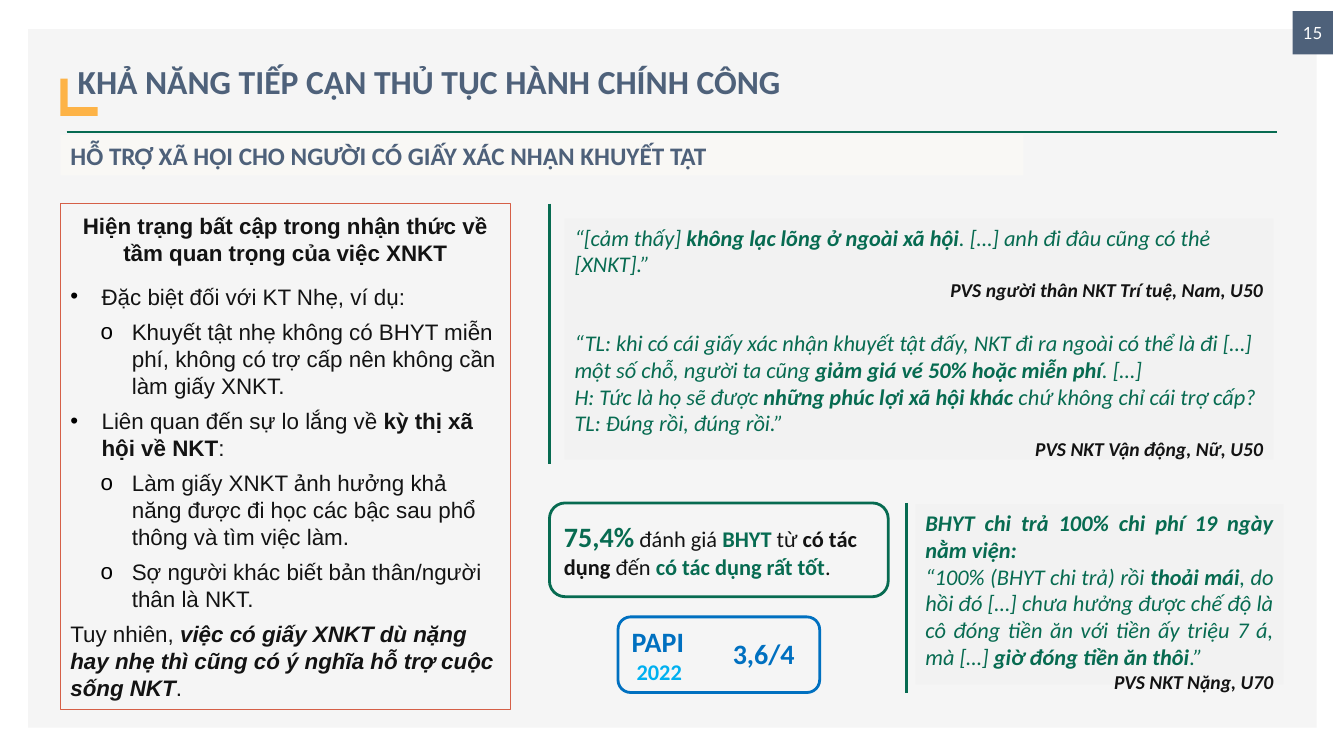
from dataclasses import dataclass

from lxml import etree
from pptx import Presentation
from pptx.dml.color import RGBColor
from pptx.enum.shapes import MSO_CONNECTOR, MSO_SHAPE
from pptx.enum.text import MSO_ANCHOR, MSO_AUTO_SIZE, PP_ALIGN
from pptx.oxml.ns import qn
from pptx.util import Pt

RECT, ROUND = MSO_SHAPE.RECTANGLE, MSO_SHAPE.ROUNDED_RECTANGLE
STRAIGHT = MSO_CONNECTOR.STRAIGHT
TOP, MIDDLE = MSO_ANCHOR.TOP, MSO_ANCHOR.MIDDLE
LEFT, CENTER, RIGHT, JUSTIFY = PP_ALIGN.LEFT, PP_ALIGN.CENTER, PP_ALIGN.RIGHT, PP_ALIGN.JUSTIFY
PX = 9144
INDENT = 31


@dataclass(frozen=True)
class Theme:
    panel: str = "F5F5F5"
    quote: str = "F2F2F2"
    cream: str = "F9F8F5"
    slate: str = "4E617A"
    amber: str = "FDB347"
    green: str = "076B51"
    red: str = "D55F47"
    ink: str = "131313"
    blue: str = "0070C0"
    sky: str = "00B0F0"
    white: str = "FFFFFF"
    black: str = "000000"
    title: int = 24
    big: int = 20
    subtitle: int = 18
    body: int = 16
    source: int = 14
    number: int = 12


T = Theme()


def run(text, style="", color=T.ink, size=T.body):
    return text, style, color, size


def para(*runs, **fmt):
    return runs, fmt


def speech(*parts, **fmt):
    return para(*(run(text, style, T.green) for text, style in parts), **fmt)


def source(text):
    return para(run(text, "bi", T.ink, T.source), align=RIGHT)


def bullet(level, *runs):
    return para(*runs, level=level, after=6)


TITLE = [para(run("KHẢ NĂNG TIẾP CẬN THỦ TỤC HÀNH CHÍNH CÔNG", "b", T.slate, T.title), spacing=1.5)]
SUBTITLE = [para(run("HỖ TRỢ XÃ HỘI CHO NGƯỜI CÓ GIẤY XÁC NHẬN KHUYẾT TẬT", "b", T.slate, T.subtitle))]
NUMBER = [para(run("15", "", T.white, T.number), align=CENTER)]
AWARENESS = [
    para(run("Hiện trạng bất cập trong nhận thức về tầm quan trọng của việc XNKT", "b"),
         align=CENTER, after=12),
    bullet(1, run("Đặc biệt đối với KT Nhẹ, ví dụ:")),
    bullet(2, run("Khuyết tật nhẹ không có BHYT miễn phí, không có trợ cấp nên không cần làm giấy XNKT.")),
    bullet(1, run("Liên quan đến sự lo lắng về "), run("kỳ thị xã hội về NKT", "b"), run(":")),
    bullet(2, run("Làm giấy XNKT ảnh hưởng khả năng được đi học các bậc sau phổ thông và tìm việc làm.")),
    bullet(2, run("Sợ người khác biết bản thân/người thân là NKT.")),
    para(run("Tuy nhiên, "),
         run("việc có giấy XNKT dù nặng hay nhẹ thì cũng có ý nghĩa hỗ trợ cuộc sống NKT", "bi"),
         run("."), after=6),
]
BENEFITS = [
    speech(("“[cảm thấy] ", "i"), ("không lạc lõng ở ngoài xã hội", "bi"),
           (". […] anh đi đâu cũng có thẻ [XNKT].”", "i")),
    source("PVS người thân NKT Trí tuệ, Nam, U50"),
    speech(("“TL: khi có cái giấy xác nhận khuyết tật đấy, NKT đi ra ngoài có thể là đi […] "
            "một số chỗ, người ta cũng ", "i"),
           ("giảm giá vé 50% hoặc miễn phí", "bi"), (". […]", "i"), before=20),
    speech(("H: Tức là họ sẽ được ", "i"), ("những phúc lợi xã hội khác ", "bi"),
           ("chứ không chỉ cái trợ cấp?", "i")),
    speech(("TL: Đúng rồi, đúng rồi.”", "i")),
    source("PVS NKT Vận động, Nữ, U50"),
]
RATING = [para(
    run("75,4%", "b", T.green, T.big), run(" đánh giá "), run("BHYT ", "b", T.green), run("từ "),
    run("có tác dụng ", "b"), run("đến"), run(" có tác dụng rất tốt", "b", T.green), run("."), after=6)]
HOSPITAL = [
    speech(("BHYT chi trả 100% chi phí 19 ngày nằm viện:", "bi"), align=JUSTIFY),
    speech(("“100% (BHYT chi trả) rồi ", "i"), ("thoải mái", "bi"),
           (", do hồi đó […] chưa hưởng được chế độ là cô đóng tiền ăn với tiền ấy triệu 7 á, mà […] ", "i"),
           ("giờ đóng tiền ăn thôi", "bi"), (".”", "i"), align=JUSTIFY),
    source("PVS NKT Nặng, U70"),
]
PAPI = [para(run("PAPI", "b", T.blue, T.big)), para(run("2022", "b", T.sky), margin=5)]
SCORE = [para(run("3,6/4", "b", T.blue, T.big), align=CENTER)]


def rgb(color):
    return RGBColor.from_string(color)


def add_bullet(p, level):
    pPr = p._p.get_or_add_pPr()
    pPr.set("marL", str((INDENT + 30 * (level - 1)) * PX))
    pPr.set("indent", str(-INDENT * PX))
    color = etree.SubElement(pPr, qn("a:buClr"))
    etree.SubElement(color, qn("a:srgbClr")).set("val", T.black)
    etree.SubElement(pPr, qn("a:buFont")).set("typeface", "Arial")
    etree.SubElement(pPr, qn("a:buChar")).set("char", "•" if level == 1 else "o")


def write(sp, paras, font="Calibri", anchor=TOP):
    tf = sp.text_frame
    tf.word_wrap = True
    tf.auto_size = MSO_AUTO_SIZE.NONE
    tf.vertical_anchor = anchor
    for i, (runs, fmt) in enumerate(paras):
        p = tf.paragraphs[0] if i == 0 else tf.add_paragraph()
        p.alignment = fmt.get("align", LEFT)
        p.line_spacing = fmt.get("spacing", 1.0)
        p.space_before = Pt(fmt.get("before", 0))
        p.space_after = Pt(fmt.get("after", 0))
        if "level" in fmt:
            add_bullet(p, fmt["level"])
        if "margin" in fmt:
            p._p.get_or_add_pPr().set("marL", str(fmt["margin"] * PX))
        for text, style, color, size in runs:
            r = p.add_run()
            r.text = text
            r.font.name = font
            r.font.size = Pt(size)
            r.font.bold = "b" in style
            r.font.italic = "i" in style
            r.font.color.rgb = rgb(color)


def add_box(s, box, fill=None, line=None, width=2, kind=RECT):
    sp = s.shapes.add_shape(kind, *(v * PX for v in box))
    sp.shadow.inherit = False
    if fill:
        sp.fill.solid()
        sp.fill.fore_color.rgb = rgb(fill)
    else:
        sp.fill.background()
    if line:
        sp.line.color.rgb = rgb(line)
        sp.line.width = Pt(width)
    else:
        sp.line.fill.background()
    return sp


def add_rule(s, x1, y1, x2, y2, width=2.25):
    cx = s.shapes.add_connector(STRAIGHT, *(v * PX for v in (x1, y1, x2, y2)))
    cx.line.color.rgb = rgb(T.green)
    cx.line.width = Pt(width)
    etree.SubElement(cx._element.spPr, qn("a:effectLst"))


def add_title(s, box):
    title = s.shapes.title
    s.shapes.element.append(title.element)
    title.left, title.top, title.width, title.height = (v * PX for v in box)
    title.fill.solid()
    title.fill.fore_color.rgb = rgb(T.panel)
    write(title, TITLE, anchor=MIDDLE)


def main():
    prs = Presentation()
    prs.slide_width, prs.slide_height = 1333 * PX, 750 * PX
    s = prs.slides.add_slide(prs.slide_layouts[5])

    add_box(s, (28, 29, 1278, 693), T.panel)
    add_rule(s, 66, 131, 1267, 131, 2)
    write(add_box(s, (1282, 11, 40, 43), T.slate), NUMBER, "Lato", MIDDLE)
    add_box(s, (60, 78, 37, 37), T.amber)
    add_title(s, (67, 35, 908, 71))
    write(add_box(s, (60, 134, 955, 40), T.cream), SUBTITLE)

    write(add_box(s, (60, 202, 446, 502), line=T.red, width=0.75), AWARENESS, "Arial", MIDDLE)
    write(add_box(s, (560, 217, 703, 239), T.quote), BENEFITS)
    add_rule(s, 545, 202, 545, 460)
    write(add_box(s, (545, 499, 336, 93), line=T.green, kind=ROUND), RATING, anchor=MIDDLE)
    write(add_box(s, (908, 500, 365, 179), T.quote), HOSPITAL)
    add_rule(s, 899, 499, 899, 688)
    write(add_box(s, (613, 612, 200, 75), line=T.blue, kind=ROUND), PAPI, anchor=MIDDLE)
    score = s.shapes.add_textbox(*(v * PX for v in (713, 626, 89, 44)))
    write(score, SCORE, anchor=MIDDLE)

    prs.save("out.pptx")


if __name__ == "__main__":
    main()
